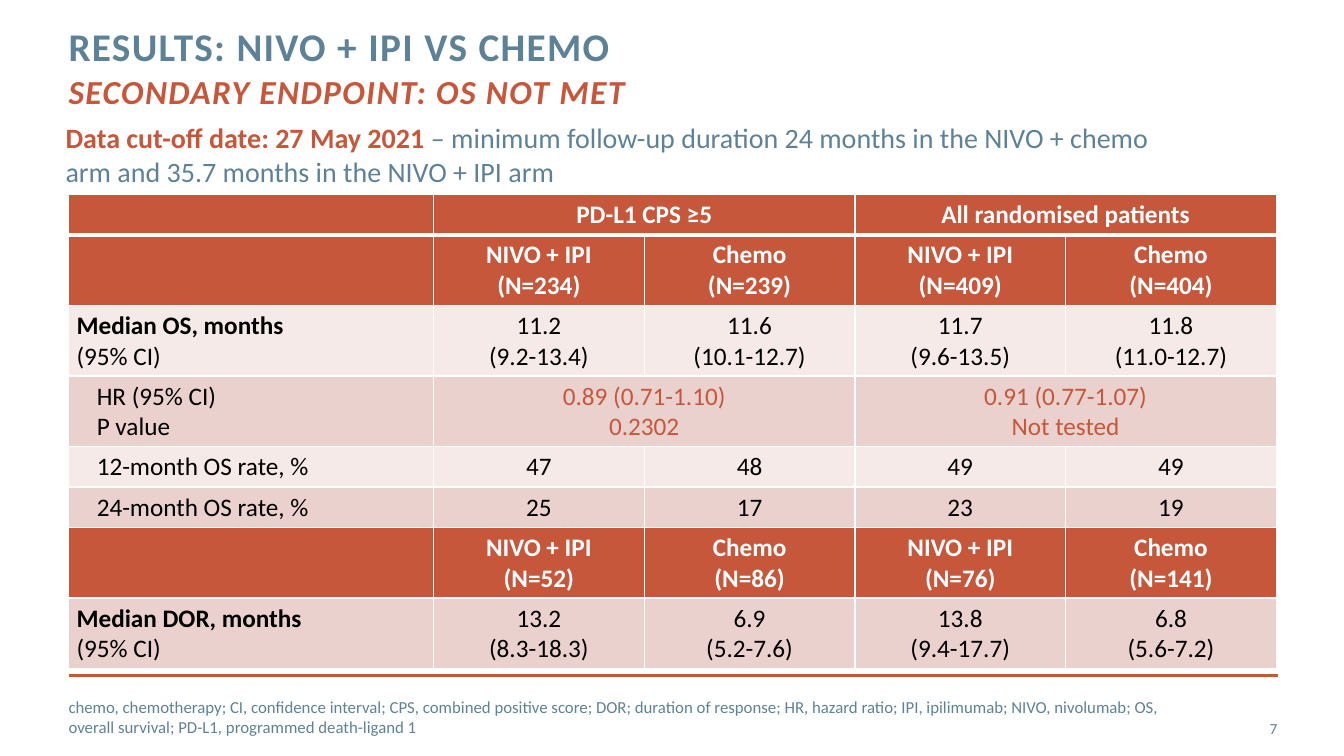
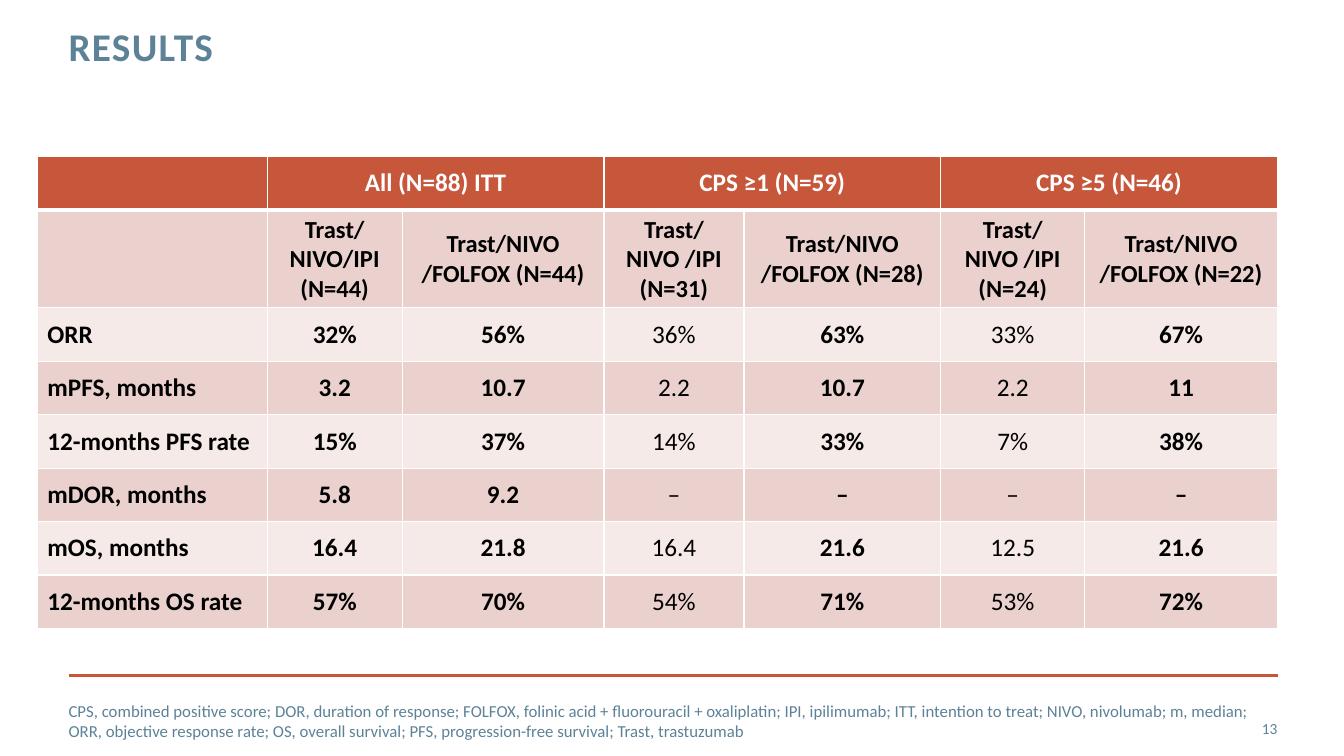
import dataclasses

import lxml.etree
import pptx
import pptx.dml.color
import pptx.enum.shapes
import pptx.enum.text
import pptx.oxml.ns
import pptx.util

Inches = pptx.util.Inches
Pt = pptx.util.Pt
ALIGN = pptx.enum.text.PP_ALIGN
ANCHOR = pptx.enum.text.MSO_ANCHOR
qn = pptx.oxml.ns.qn


@dataclasses.dataclass(frozen=True)
class Look:
    size: float
    color: str
    bold: bool = False
    italic: bool = False
    tracking: int = 0


@dataclasses.dataclass(frozen=True)
class Band:
    fill: str
    look: Look


class Theme:
    font = "Calibri"
    rust, slate, white, black = "C6573B", "5D8298", "FFFFFF", "000000"
    light, dark = "F5EAE8", "EAD1CE"
    title = Look(28, slate, bold=True, tracking=100)
    subtitle = Look(24, rust, bold=True, italic=True, tracking=100)
    lead_strong = Look(20, rust, bold=True)
    lead = Look(20, slate)
    footnote = Look(12, slate)
    number = Look(11, slate)
    body = Look(18, black)
    strong = Look(18, black, bold=True)
    accent = Look(18, rust)
    bands = {
        "head": Band(rust, Look(18, white, bold=True)),
        "subhead": Band(dark, Look(17.5, black, bold=True)),
        "light": Band(light, body),
        "dark": Band(dark, body),
    }


class Deck:
    """Holds the theme, the presentation and the slide being built."""

    def __init__(self):
        self.presentation = pptx.Presentation()
        self.presentation.slide_width = Inches(13.33)
        self.presentation.slide_height = Inches(7.5)
        self.page = None

    def color(self, value):
        return pptx.dml.color.RGBColor.from_string(value)

    def style(self, paragraph, *looks):
        for span, look in zip(paragraph.runs, looks):
            span.font.name = Theme.font
            span.font.size = Pt(look.size)
            span.font.bold = look.bold
            span.font.italic = look.italic
            span.font.color.rgb = self.color(look.color)
            if look.tracking:
                span.font._element.set("spc", str(look.tracking))

    def style_cell(self, cell, look):
        for paragraph in cell.text_frame.paragraphs:
            self.style(paragraph, look)

    def text(self, left, top, width, height, spans, looks,
             anchor=ANCHOR.TOP, align=ALIGN.LEFT, padding=0):
        box = self.page.shapes.add_textbox(
            Inches(left), Inches(top), Inches(width), Inches(height))
        frame = box.text_frame
        frame.word_wrap = True
        frame.vertical_anchor = anchor
        frame.margin_left = frame.margin_right = 0
        frame.margin_top = frame.margin_bottom = Inches(padding)
        para = frame.paragraphs[0]
        para.alignment = align
        for words in spans:
            para.add_run().text = words
        self.style(para, *looks)
        return para

    def rule(self):
        line = self.page.shapes.add_connector(
            pptx.enum.shapes.MSO_CONNECTOR.STRAIGHT,
            Inches(0.68), Inches(6.7), Inches(12.68), Inches(6.7))
        line.line.color.rgb = self.color(Theme.rust)
        line.line.width = Pt(2)
        lxml.etree.SubElement(line._element.spPr, qn("a:effectLst"))

    def title(self, title, subtitle=None):
        para = self.text(0.68, 0.27, 9.56, 0.88, [], [])
        para.text = "\v".join(filter(None, (title, subtitle)))
        para.line_spacing = Pt(30)
        self.style(para, Theme.title, Theme.subtitle)

    def start(self, title, number, subtitle=None):
        self.page = self.presentation.slides.add_slide(
            self.presentation.slide_layouts[6])
        self.rule()
        self.title(title, subtitle)
        self.text(11.81, 7.03, 0.86, 0.4, [str(number)], [Theme.number],
                  ANCHOR.MIDDLE, ALIGN.RIGHT)

    def footnote(self, top, width, words):
        self.text(0.68, top, width, 0.4, [words], [Theme.footnote], ANCHOR.MIDDLE)

    def borders(self, cell, top, bottom):
        properties = cell._tc.get_or_add_tcPr()
        for side, width in (("L", 1), ("R", 1), ("T", top), ("B", bottom)):
            line = lxml.etree.SubElement(
                properties, qn(f"a:ln{side}"), w=str(Pt(width)))
            fill = lxml.etree.SubElement(line, qn("a:solidFill"))
            lxml.etree.SubElement(fill, qn("a:srgbClr"), val=Theme.white)

    def table(self, left, top, widths, heights, rows, label_inset, inset):
        frame = self.page.shapes.add_table(
            len(rows), len(widths), Inches(left), Inches(top),
            Inches(sum(widths)), Inches(sum(heights)))
        grid = frame.table
        grid.first_row = grid.horz_banding = False
        for column, width in zip(grid.columns, widths):
            column.width = Inches(width)
        for row, height in zip(grid.rows, heights):
            row.height = Inches(height)
        for y, (name, values) in enumerate(rows):
            band = Theme.bands[name]
            for x, value in enumerate(values):
                cell = grid.cell(y, x)
                self.borders(cell, 3 if y == 1 else 1, 3 if y == 0 else 1)
                cell.fill.solid()
                cell.fill.fore_color.rgb = self.color(band.fill)
                if value is None:
                    grid.cell(y, x - 1).merge(cell)
                    continue
                cell.vertical_anchor = ANCHOR.MIDDLE
                cell.margin_left = Inches(inset if x else label_inset)
                cell.margin_right = Inches(inset)
                cell.text_frame.text = value
                for paragraph in cell.text_frame.paragraphs:
                    paragraph.alignment = ALIGN.CENTER if x else ALIGN.LEFT
                self.style_cell(cell, band.look)
        return grid


def survival_slide(deck):
    deck.start("RESULTS: NIVO + IPI VS CHEMO", 7, "SECONDARY ENDPOINT: OS NOT MET")
    deck.footnote(
        6.91, 11,
        "chemo, chemotherapy; CI, confidence interval; CPS, combined positive score; "
        "DOR; duration of response; HR, hazard ratio; IPI, ipilimumab; NIVO, nivolumab; "
        "OS, overall survival; PD-L1, programmed death-ligand 1")
    deck.text(
        0.65, 1.15, 11.02, 0.77,
        ["Data cut-off date: 27 May 2021 ",
         "– minimum follow-up duration 24 months in the NIVO + chemo arm "
         "and 35.7 months in the NIVO + IPI arm"],
        [Theme.lead_strong, Theme.lead], padding=0.05)

    def arms(*sizes):
        names = ("NIVO + IPI", "Chemo") * 2
        return "head", ["", *(f"{name}\n(N={size})" for name, size in zip(names, sizes))]

    rows = [
        ("head", ["", "PD-L1 CPS ≥5", None, "All randomised patients", None]),
        arms(234, 239, 409, 404),
        ("light", ["Median OS, months\n(95% CI)", "11.2\n(9.2-13.4)",
                   "11.6\n(10.1-12.7)", "11.7\n(9.6-13.5)", "11.8\n(11.0-12.7)"]),
        ("dark", ["HR (95% CI)\nP value", "0.89 (0.71-1.10)\n0.2302", None,
                  "0.91 (0.77-1.07)\nNot tested", None]),
        ("light", ["12-month OS rate, %", "47", "48", "49", "49"]),
        ("dark", ["24-month OS rate, %", "25", "17", "23", "19"]),
        arms(52, 86, 76, 141),
        ("dark", ["Median DOR, months\n(95% CI)", "13.2\n(8.3-18.3)",
                  "6.9\n(5.2-7.6)", "13.8\n(9.4-17.7)", "6.8\n(5.6-7.2)"]),
    ]
    single, double = 0.4, 0.7
    heights = [double if "\n" in "".join(filter(None, values)) else single
               for name, values in rows]
    grid = deck.table(0.68, 1.93, [3.62] + [2.09] * 4, heights, rows, 0.08, 0.02)
    for y in (2, 7):
        deck.style(grid.cell(y, 0).text_frame.paragraphs[0], Theme.strong)
    for y in (3, 4, 5):
        for paragraph in grid.cell(y, 0).text_frame.paragraphs:
            paragraph._p.get_or_add_pPr().set("indent", str(Inches(0.2)))
    for x in (1, 3):
        deck.style_cell(grid.cell(3, x), Theme.accent)


def response_slide(deck):
    deck.start("RESULTS", 13)
    deck.footnote(
        6.95, 12.05,
        "CPS, combined positive score; DOR, duration of response; FOLFOX, folinic acid + "
        "fluorouracil + oxaliplatin; IPI, ipilimumab; ITT, intention to treat; "
        "NIVO, nivolumab; m, median; ORR, objective response rate; OS, overall survival; "
        "PFS, progression-free survival; Trast, trastuzumab")
    rows = [
        ("head", ["", "All (N=88) ITT", None, "CPS ≥1 (N=59)", None,
                  "CPS ≥5 (N=46)", None]),
        ("subhead", ["", "Trast/NIVO/IPI (N=44)", "Trast/NIVO /FOLFOX (N=44)",
                     "Trast/NIVO /IPI (N=31)", "Trast/NIVO /FOLFOX (N=28)",
                     "Trast/NIVO /IPI (N=24)", "Trast/NIVO /FOLFOX (N=22)"]),
        ("light", ["ORR", "32%", "56%", "36%", "63%", "33%", "67%"]),
        ("dark", ["mPFS, months", "3.2", "10.7", "2.2", "10.7", "2.2", "11"]),
        ("light", ["12-months PFS rate", "15%", "37%", "14%", "33%", "7%", "38%"]),
        ("dark", ["mDOR, months", "5.8", "9.2", "–", "–", "–", "–"]),
        ("light", ["mOS, months", "16.4", "21.8", "16.4", "21.6", "12.5", "21.6"]),
        ("dark", ["12-months OS rate", "57%", "70%", "54%", "71%", "53%", "72%"]),
    ]
    grid = deck.table(0.37, 1.55, [2.28, 1.34, 2, 1.39, 1.95, 1.43, 1.91],
                      [0.53] * len(rows), rows, 0.1, 0.1)
    for y in range(2, len(rows)):
        for x in (0, 1, 2, 4, 6):
            deck.style_cell(grid.cell(y, x), Theme.strong)


def main():
    deck = Deck()
    survival_slide(deck)
    response_slide(deck)
    deck.presentation.save("out.pptx")


if __name__ == "__main__":
    main()
